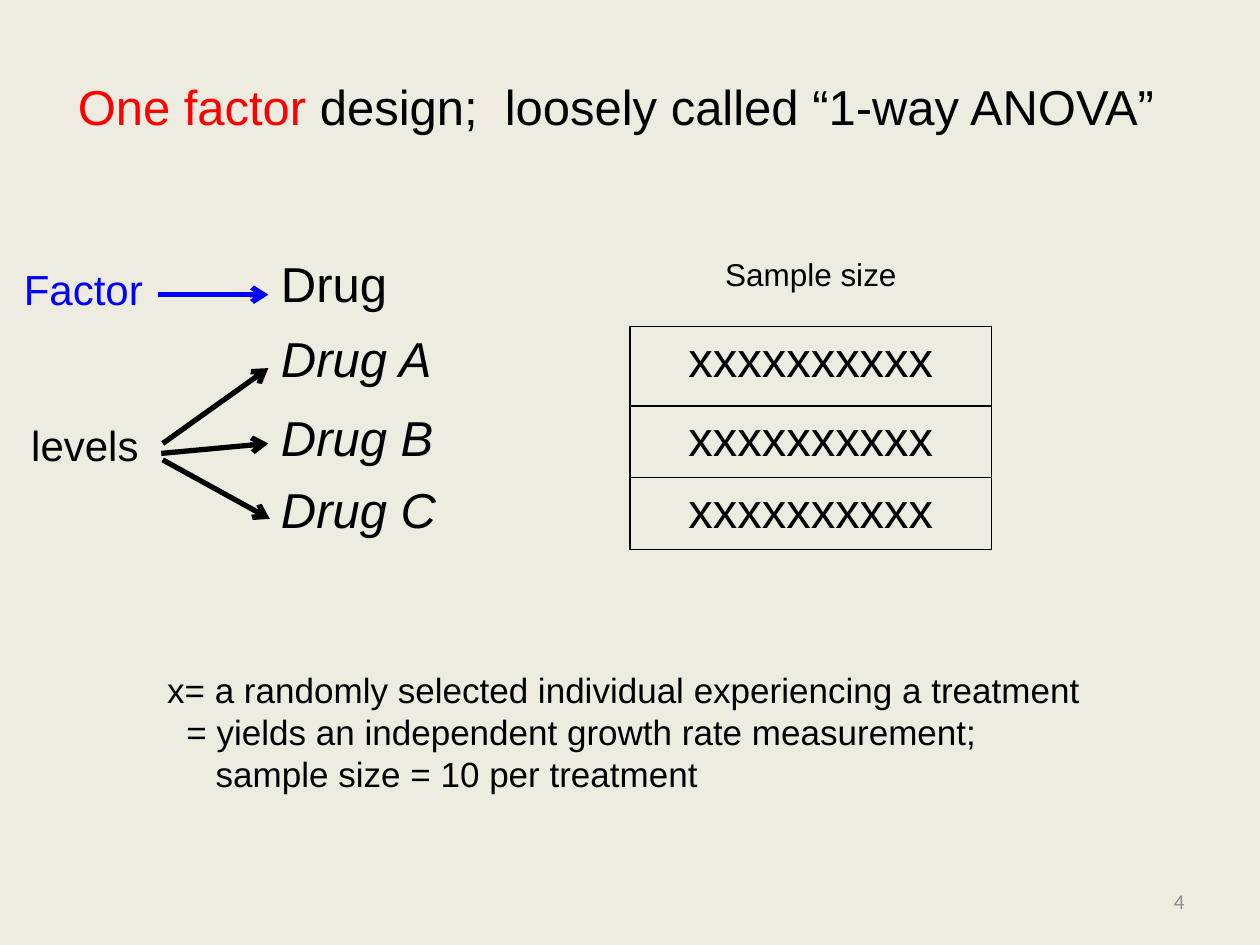
"""Build a slide that explains a one-factor design with its levels and sample sizes."""
from lxml.etree import SubElement
from pptx import Presentation
from pptx.dml.color import RGBColor
from pptx.enum.shapes import MSO_CONNECTOR
from pptx.enum.text import MSO_ANCHOR, PP_ALIGN
from pptx.oxml.ns import qn
from pptx.util import Cm, Pt

THEME = {
    "background": RGBColor(0xEE, 0xEC, 0xE1),
    "ink": RGBColor(0, 0, 0),
    "factor": RGBColor(0, 0, 0xFF),
    "accent": RGBColor(0xFF, 0, 0),
    "muted": RGBColor(0x8C, 0x8C, 0x8C),
    "heading": Pt(28),
    "label": Pt(24),
    "note": Pt(20),
    "caption": Pt(18),
    "footer": Pt(12),
    "arrow": Pt(3),
    "border": Pt(1),
}
NO_STYLE_NO_GRID = "{2D5ABB26-0587-4C30-8999-92F81FD0307C}"


def write(paragraph, text, size, color="ink", **formats):
    run = paragraph.add_run()
    run.text = text
    run.font.color.rgb = THEME[color]
    for attribute, value in {"name": "Arial", "size": THEME[size], **formats}.items():
        setattr(run.font, attribute, value)


def add_frame(left, top, width, height, **formats):
    frame = slide.shapes.add_textbox(Cm(left), Cm(top), Cm(width), Cm(height)).text_frame
    for attribute, value in {"word_wrap": False, **formats}.items():
        setattr(frame, attribute, value)
    return frame


presentation = Presentation()
presentation.slide_width, presentation.slide_height = Cm(25.4), Cm(19.05)
slide = presentation.slides.add_slide(presentation.slide_layouts[6])
slide.background.fill.solid()
slide.background.fill.fore_color.rgb = THEME["background"]

row_heights = [1.5, 1.6, 1.45, 1.45]
treatments = slide.shapes.add_table(4, 2, Cm(5.41), Cm(5.08), Cm(14.58), Cm(sum(row_heights))).table
treatments.first_row = treatments.horz_banding = False
treatments._tbl.tblPr.find(qn("a:tableStyleId")).text = NO_STYLE_NO_GRID
for row, height in zip(treatments.rows, row_heights):
    row.height = Cm(height)

for index, treatment in enumerate(["Drug", "Drug A", "Drug B", "Drug C"]):
    name_cell, sample_cell = treatments.cell(index, 0), treatments.cell(index, 1)
    write(name_cell.text_frame.paragraphs[0], treatment, "heading", italic=index > 0)
    sample = sample_cell.text_frame.paragraphs[0]
    sample.alignment = PP_ALIGN.CENTER
    if index:
        write(sample, "x" * 10, "heading")
    else:
        write(sample, "Sample size", "caption")
    for side in ("lnL", "lnR", "lnT", "lnB") if index else ("lnB",):
        border = SubElement(sample_cell._tc.get_or_add_tcPr(), qn(f"a:{side}"), w=str(THEME["border"]))
        border_fill = SubElement(border, qn("a:solidFill"))
        SubElement(border_fill, qn("a:srgbClr"), val=str(THEME["ink"]))
    for cell in (name_cell, sample_cell):
        cell.fill.background()

for label, color, left, top, width in [
    ("Factor", "factor", 0.23, 5.18, 2.95),
    ("levels", "ink", 0.38, 8.33, 2.69),
]:
    write(add_frame(left, top, width, 1.27).paragraphs[0], label, "label", color)

for color, start_x, start_y, end_x, end_y in [
    ("factor", 3.18, 5.94, 5.41, 5.94),
    ("ink", 3.28, 8.94, 5.41, 7.42),
    ("ink", 3.25, 9.14, 5.41, 8.94),
    ("ink", 3.28, 9.27, 5.44, 10.46),
]:
    pointer = slide.shapes.add_connector(
        MSO_CONNECTOR.STRAIGHT, Cm(start_x), Cm(start_y), Cm(end_x), Cm(end_y)
    )
    pointer.line.color.rgb = THEME[color]
    pointer.line.width = THEME["arrow"]
    SubElement(pointer.line._get_or_add_ln(), qn("a:tailEnd"), type="arrow")
    SubElement(pointer._element.spPr, qn("a:effectLst"))

title = add_frame(1.32, 1.42, 22.78, 1.45).paragraphs[0]
write(title, "One factor", "heading", "accent")
write(title, " design;  loosely called “1-way ANOVA”", "heading")

explanation = add_frame(3.12, 13.34, 19.18, 2.82, word_wrap=True, vertical_anchor=MSO_ANCHOR.MIDDLE)
for index, (indent, sentence) in enumerate([
    (0, "x= a randomly selected individual experiencing a treatment"),
    (0.39, "= yields an independent growth rate measurement;"),
    (0.98, "sample size = 10 per treatment"),
]):
    line = explanation.add_paragraph() if index else explanation.paragraphs[0]
    line._p.get_or_add_pPr().set("marL", str(Cm(indent)))
    write(line, sentence, "note")

page_number = add_frame(18.21, 17.65, 5.92, 1.02, word_wrap=True, vertical_anchor=MSO_ANCHOR.MIDDLE).paragraphs[0]
page_number.alignment = PP_ALIGN.RIGHT
write(page_number, "4", "footer", "muted", name="Calibri")

presentation.save("out.pptx")
